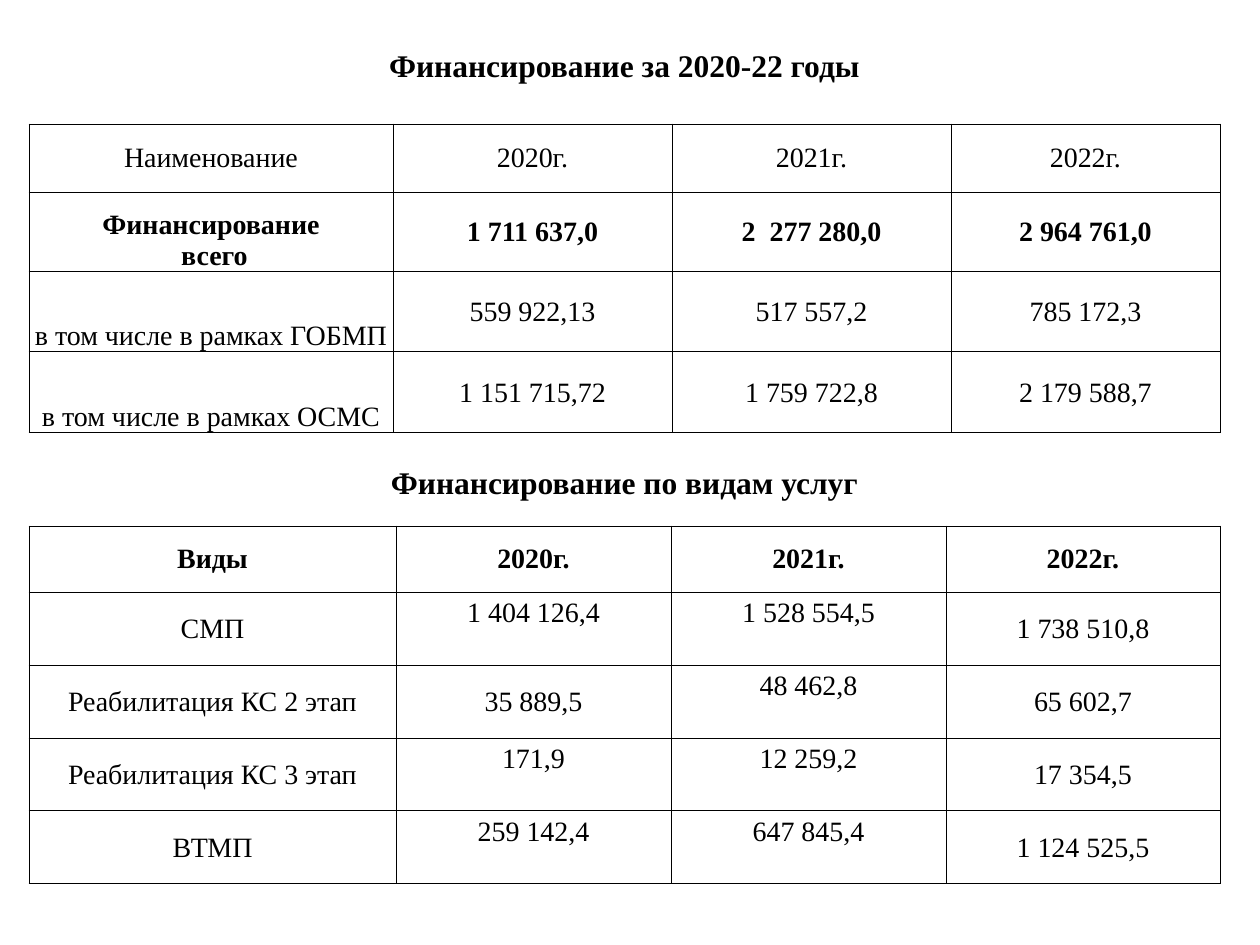
from dataclasses import dataclass

from lxml import etree
from pptx import Presentation
from pptx import util as u
from pptx.dml.color import RGBColor
from pptx.enum import text
from pptx.oxml.ns import qn

EMU_PER_PX = 914400 // 126
MIDDLE, BOTTOM = text.MSO_ANCHOR.MIDDLE, text.MSO_ANCHOR.BOTTOM


@dataclass(frozen=True)
class Theme:
    font: str = "Times New Roman"
    ink: str = "000000"
    title_pt: int = 18
    body_pt: int = 16
    border_pt: float = 0.5


THEME = Theme()

TOTALS = [
    ["Наименование", "2020г.", "2021г.", "2022г."],
    ["Финансирование\n всего", "1 711 637,0", "2  277 280,0", "2 964 761,0"],
    ["в том числе в рамках ГОБМП", "559 922,13", "517 557,2", "785 172,3"],
    ["в том числе в рамках ОСМС", "1 151 715,72", "1 759 722,8", "2 179 588,7"],
]
SERVICES = [
    ["Виды", "2020г.", "2021г.", "2022г."],
    ["СМП", "1 404 126,4", "1 528 554,5", "1 738 510,8"],
    ["Реабилитация КС 2 этап", "35 889,5", "48 462,8", "65 602,7"],
    ["Реабилитация КС 3 этап", "171,9", "12 259,2", "17 354,5"],
    ["ВТМП", "259 142,4", "647 845,4", "1 124 525,5"],
]
RAISED_SERVICES = {(2, 1), (2, 2), (3, 2), (4, 1), (4, 2), (5, 1), (5, 2)}
RAISE = 32


def px(n):
    return u.Emu(n * EMU_PER_PX)


def set_borders(cell, visible):
    """Draw the sides named in visible (of L, R, T, B) and hide the others."""
    tc_pr = cell._tc.get_or_add_tcPr()
    for side in "LRTB":
        ln = etree.SubElement(tc_pr, qn(f"a:ln{side}"), w=str(u.Pt(THEME.border_pt)))
        if side in visible:
            fill = etree.SubElement(ln, qn("a:solidFill"))
            etree.SubElement(fill, qn("a:srgbClr"), val=THEME.ink)
        else:
            etree.SubElement(ln, qn("a:noFill"))


def fill_cell(cell, words, size, bold=False, anchor=MIDDLE, bottom=0, borders="LRTB"):
    set_borders(cell, borders)
    cell.fill.background()
    cell.vertical_anchor = anchor
    cell.margin_left = cell.margin_right = cell.margin_top = px(1)
    cell.margin_bottom = px(bottom)
    tf = cell.text_frame
    for i, line in enumerate(words.split("\n")):
        p = tf.add_paragraph() if i else tf.paragraphs[0]
        p.alignment = text.PP_ALIGN.CENTER
        r = p.add_run()
        r.text = line
        r.font.name = THEME.font
        r.font.size = u.Pt(size)
        r.font.bold = bold
        r.font.color.rgb = RGBColor.from_string(THEME.ink)


def add_grid(s, top, widths, heights):
    frame = s.shapes.add_table(len(heights), len(widths), px(29), px(top),
                               px(sum(widths)), px(sum(heights)))
    table = frame.table
    table.first_row = table.horz_banding = False
    for column, width in zip(table.columns, widths):
        column.width = px(width)
    for row, height in zip(table.rows, heights):
        row.height = px(height)
    return table


def add_title_row(table, title, anchor, bottom):
    last = len(table.columns) - 1
    for col in range(1, last + 1):
        set_borders(table.cell(0, col), "B")
    table.cell(0, 0).merge(table.cell(0, last))
    fill_cell(table.cell(0, 0), title, THEME.title_pt, True, anchor, bottom, "B")


def add_body(table, rows, bold_row, low_labels=(), raised=()):
    """Fill the rows under the title; low labels sit at the bottom, raised cells higher."""
    for i, row in enumerate(rows, start=1):
        for j, words in enumerate(row):
            low = j == 0 and i in low_labels
            fill_cell(table.cell(i, j), words, THEME.body_pt, i == bold_row,
                      BOTTOM if low else MIDDLE, RAISE if (i, j) in raised else 0)


def main():
    prs = Presentation()
    prs.slide_width, prs.slide_height = u.Inches(10), u.Inches(7.5)
    s = prs.slides.add_slide(prs.slide_layouts[6])

    totals = add_grid(s, 39, [364, 279, 279, 269], [85, 68, 80, 80, 81])
    add_title_row(totals, "Финансирование за 2020-22 годы", MIDDLE, 30)
    add_body(totals, TOTALS, bold_row=2, low_labels={2, 3, 4})

    services = add_grid(s, 452, [367, 275, 275, 274], [74, 66] + [73] * 4)
    add_title_row(services, "Финансирование по видам услуг", BOTTOM, 25)
    add_body(services, SERVICES, bold_row=1, raised=RAISED_SERVICES)

    prs.save("out.pptx")


if __name__ == "__main__":
    main()
